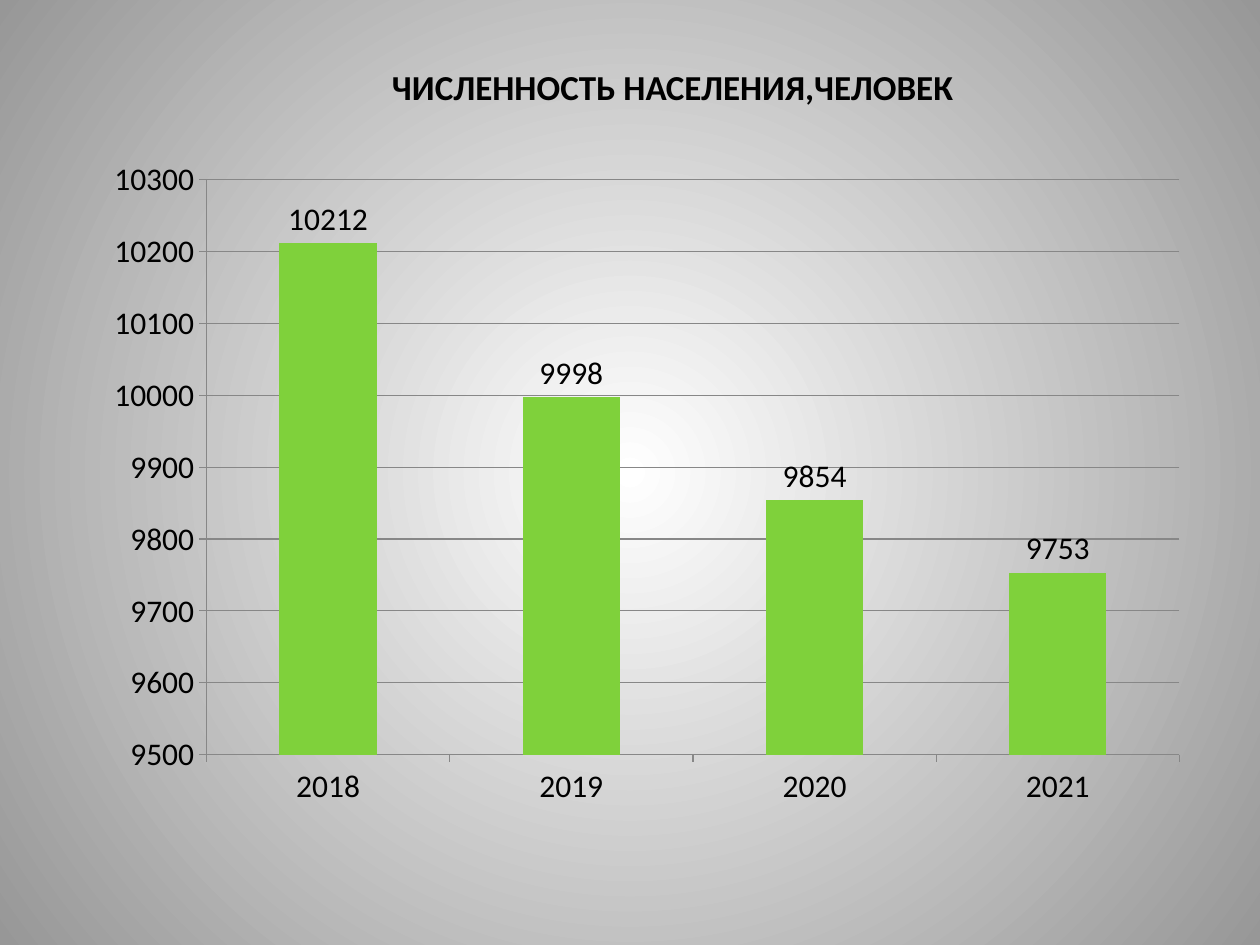
from lxml.etree import SubElement
from pptx import Presentation
from pptx.chart.data import CategoryChartData
from pptx.dml.color import RGBColor
from pptx.enum.chart import XL_CHART_TYPE as ChartType
from pptx.enum.chart import XL_LABEL_POSITION as LabelPosition
from pptx.enum.chart import XL_TICK_MARK as TickMark
from pptx.enum.text import MSO_ANCHOR as Anchor
from pptx.enum.text import MSO_AUTO_SIZE as AutoSize
from pptx.enum.text import PP_ALIGN as Align
from pptx.oxml.ns import qn
from pptx.util import Pt

BLACK = RGBColor(0x00, 0x00, 0x00)
WHITE = RGBColor(0xFF, 0xFF, 0xFF)
EDGE_GRAY = RGBColor(0x97, 0x97, 0x97)
LINE_GRAY = RGBColor(0x87, 0x87, 0x87)
GREEN = RGBColor(0x7F, 0xD1, 0x3B)
FONT = "Calibri"
TITLE = " ЧИСЛЕННОСТЬ НАСЕЛЕНИЯ,ЧЕЛОВЕК"
POPULATION = {"2018": 10212, "2019": 9998, "2020": 9854, "2021": 9753}
PLOT_AREA = {"x": 0.13, "y": 0.06, "w": 0.86, "h": 0.81}


def style_font(font, size, bold=False):
    """Apply the slide's typeface in black."""
    font.name, font.size, font.bold = FONT, Pt(size), bold
    font.color.rgb = BLACK


def paint_background(slide):
    """Fill the background with a round gradient, white at the centre."""
    fill = slide.background.fill
    fill.gradient()
    for stop, color, position in zip(fill.gradient_stops, (WHITE, EDGE_GRAY), (0, 1)):
        stop.color.rgb = color
        stop.position = position
    direction = next(slide.element.iter(qn("a:lin")))
    gradient = direction.getparent()
    circle = SubElement(gradient, qn("a:path"), path="circle")
    SubElement(circle, qn("a:fillToRect"), dict.fromkeys("ltrb", "50000"))
    gradient.replace(direction, circle)


def place_title(slide, left, top, width, height):
    """Write the heading in the title placeholder."""
    title = slide.shapes.title
    title.left, title.top, title.width, title.height = map(Pt, (left, top, width, height))
    frame = title.text_frame
    frame.word_wrap = True
    frame.auto_size = AutoSize.SHAPE_TO_FIT_TEXT
    frame.vertical_anchor = Anchor.TOP
    paragraph = frame.paragraphs[0]
    paragraph.alignment = Align.CENTER
    run = paragraph.add_run()
    run.text = TITLE
    style_font(run.font, 20, bold=True)


def fix_plot_area(chart):
    """Set the inner plot area as fractions of the chart."""
    plot_area = next(chart.element.iter(qn("c:plotArea")))
    for old_layout in plot_area.findall(qn("c:layout")):
        plot_area.remove(old_layout)
    layout = SubElement(plot_area, qn("c:layout"))
    plot_area.insert(0, layout)
    manual = SubElement(layout, qn("c:manualLayout"))
    settings = {"layoutTarget": "inner", "xMode": "edge", "yMode": "edge", **PLOT_AREA}
    for tag, value in settings.items():
        SubElement(manual, qn(f"c:{tag}"), val=str(value))


def place_population_chart(slide, left, top, width, height):
    """Draw the yearly population as columns."""
    data = CategoryChartData()
    data.categories = POPULATION.keys()
    data.add_series("Series 1", POPULATION.values())
    chart = slide.shapes.add_chart(
        ChartType.COLUMN_CLUSTERED, *map(Pt, (left, top, width, height)), data
    ).chart
    style_font(chart.font, 18)
    chart.has_title = chart.has_legend = False
    fix_plot_area(chart)

    years, people = chart.category_axis, chart.value_axis
    for axis in (years, people):
        axis.major_tick_mark = TickMark.OUTSIDE
        axis.minor_tick_mark = TickMark.NONE
        axis.format.line.color.rgb = LINE_GRAY
        axis.format.line.width = Pt(0.75)
    people.minimum_scale, people.maximum_scale, people.major_unit = 9500, 10300, 100
    people.has_major_gridlines = True
    people.major_gridlines.format.line.color.rgb = LINE_GRAY
    people.major_gridlines.format.line.width = Pt(0.75)

    columns = chart.plots[0]
    columns.gap_width = 150
    columns.vary_by_categories = False
    columns.series[0].format.fill.solid()
    columns.series[0].format.fill.fore_color.rgb = GREEN
    labels = columns.series[0].data_labels
    labels.show_value = True
    labels.position = LabelPosition.OUTSIDE_END
    style_font(labels.font, 18)


def main():
    """Build and save the slide."""
    deck = Presentation()
    deck.slide_width, deck.slide_height = Pt(720), Pt(540)
    slide = deck.slides.add_slide(deck.slide_layouts[5])
    paint_background(slide)
    place_population_chart(slide, 34, 78.5, 646.5, 405.5)
    place_title(slide, 118, 34, 528.5, 31.5)
    deck.save("out.pptx")


if __name__ == "__main__":
    main()
